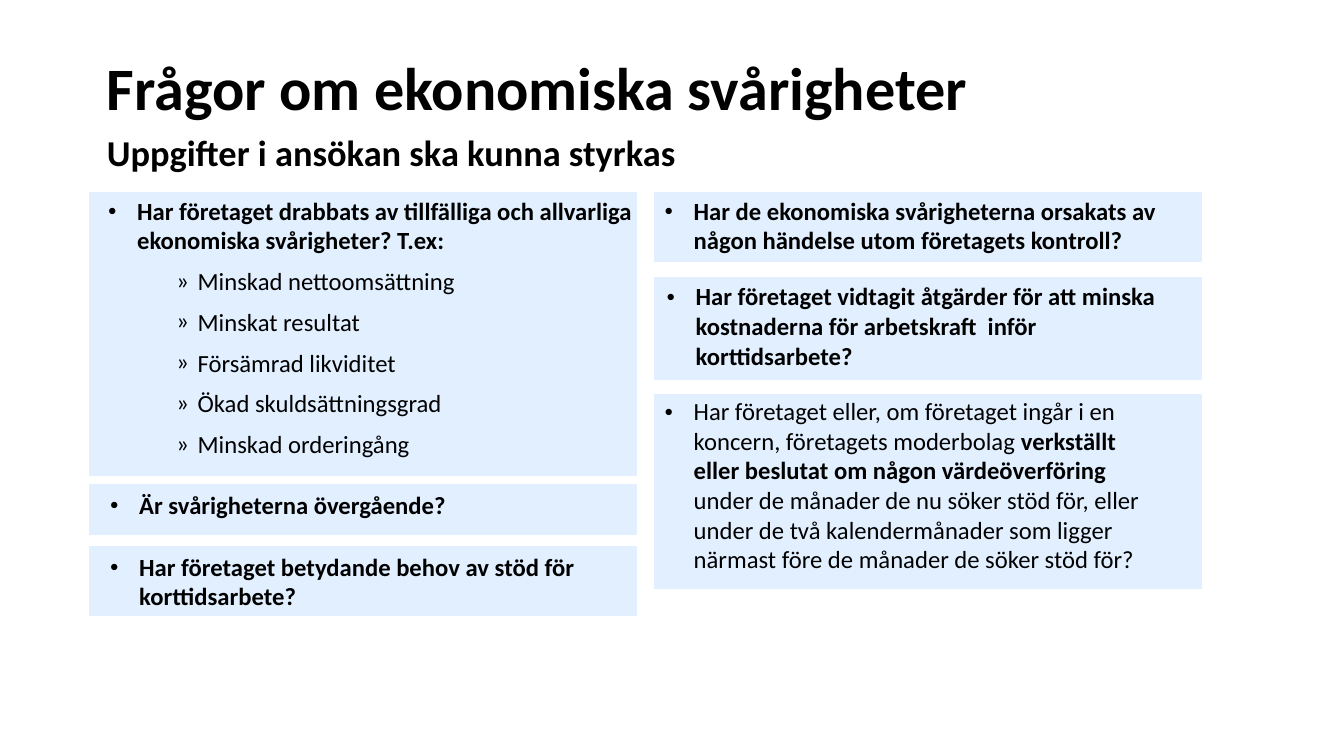
from lxml import etree
from pptx import Presentation
from pptx import util as u
from pptx.dml.color import RGBColor
from pptx.enum import shapes, text
from pptx.oxml.ns import qn

PX = 9144  # 100 px to the inch
BLACK = RGBColor(0x00, 0x00, 0x00)
PALE_BLUE = RGBColor(0xE1, 0xEF, 0xFF)
BODY_SIZE = 17.6

HEADING = {"after": 6}
QUESTION = {"after": 6, "bullet": "•", "bullet_size": 73, "margin": 29, "hang": 29}
EXAMPLE = {"before": 2, "after": 6, "bullet": "»", "bullet_size": 100, "margin": 89, "hang": 21}


def add_bullet(para, style):
    props = para._p.get_or_add_pPr()
    props.set("marL", str(style["margin"] * PX))
    props.set("indent", str(-style["hang"] * PX))
    etree.SubElement(props, qn("a:buSzPct"), val=str(style["bullet_size"] * 1000))
    etree.SubElement(props, qn("a:buFont"), typeface="Calibri")
    etree.SubElement(props, qn("a:buChar"), char=style["bullet"])


def add_text(area, paragraphs, size=BODY_SIZE, anchor=text.MSO_ANCHOR.TOP):
    """Each paragraph is a style and a list of (wording, bold) spans."""
    frame = slide.shapes.add_textbox(*(n * PX for n in area)).text_frame
    settings = {"word_wrap": True, "vertical_anchor": anchor, "margin_left": 0,
                "margin_top": 0, "margin_right": 0, "margin_bottom": 0}
    for name, value in settings.items():
        setattr(frame, name, value)
    for index, (style, spans) in enumerate(paragraphs):
        para = frame.add_paragraph() if index else frame.paragraphs[0]
        para.space_before = u.Pt(style.get("before", 0))
        para.space_after = u.Pt(style.get("after", 0))
        if "line" in style:
            para.line_spacing = style["line"]
        if "bullet" in style:
            add_bullet(para, style)
        for wording, bold in spans:
            span = para.add_run()
            span.text = wording
            for name, value in {"name": "Calibri", "size": u.Pt(size), "bold": bold}.items():
                setattr(span.font, name, value)
            span.font.color.rgb = BLACK


deck = Presentation()
deck.slide_width, deck.slide_height = 1333 * PX, 750 * PX
slide = deck.slides.add_slide(deck.slide_layouts[6])

# Panels: left, top, height
PANEL_WIDTH = 542
for left, top, height in [(89, 191, 281), (89, 481, 49), (89, 542, 68),
                          (649, 191, 68), (649, 275, 101), (649, 392, 192)]:
    panel = slide.shapes.add_shape(shapes.MSO_SHAPE.RECTANGLE, left * PX, top * PX,
                                   PANEL_WIDTH * PX, height * PX)
    panel.shadow.inherit = False
    panel.fill.solid()
    panel.fill.fore_color.rgb = PALE_BLUE
    panel.line.color.rgb = PALE_BLUE
    panel.line.width = u.Pt(1)

# Headings
add_text((106, 9, 1173, 114), [({"line": 0.9}, [("Frågor om ekonomiska svårigheter", True)])],
         size=43, anchor=text.MSO_ANCHOR.BOTTOM)
add_text((106, 129, 940, 52), [(HEADING, [("Uppgifter i ansökan ska kunna styrkas", True)])],
         size=26)

# Questions
examples = ["Minskad nettoomsättning", "Minskat resultat", "Försämrad likviditet",
            "Ökad skuldsättningsgrad", "Minskad orderingång"]
add_text((107, 194, 524, 274), [
    (QUESTION, [("Har företaget drabbats av tillfälliga och allvarliga ekonomiska "
                 "svårigheter? T.ex:", True)]),
    *((EXAMPLE, [(example, False)]) for example in examples)])

questions = [
    ((659, 194, 496, 68), [("Har de ekonomiska svårigheterna orsakats av någon händelse utom "
                            "företagets kontroll?", True)]),
    ((109, 486, 524, 37), [("Är svårigheterna övergående?", True)]),
    ((109, 547, 524, 59), [("Har företaget betydande behov av stöd för korttidsarbete?", True)]),
    ((661, 279, 496, 98), [("Har företaget vidtagit åtgärder för att minska kostnaderna för "
                            "arbetskraft  inför korttidsarbete?", True)]),
    ((659, 393, 496, 192), [
        ("Har företaget eller, om företaget ingår i en koncern, företagets moderbolag ", False),
        ("verkställt eller beslutat om någon värdeöverföring ", True),
        ("under de månader de nu söker stöd för, eller under de två kalendermånader som "
         "ligger närmast före de månader de söker stöd för?", False)]),
]
for area, spans in questions:
    add_text(area, [(QUESTION, spans)])

deck.save("out.pptx")
